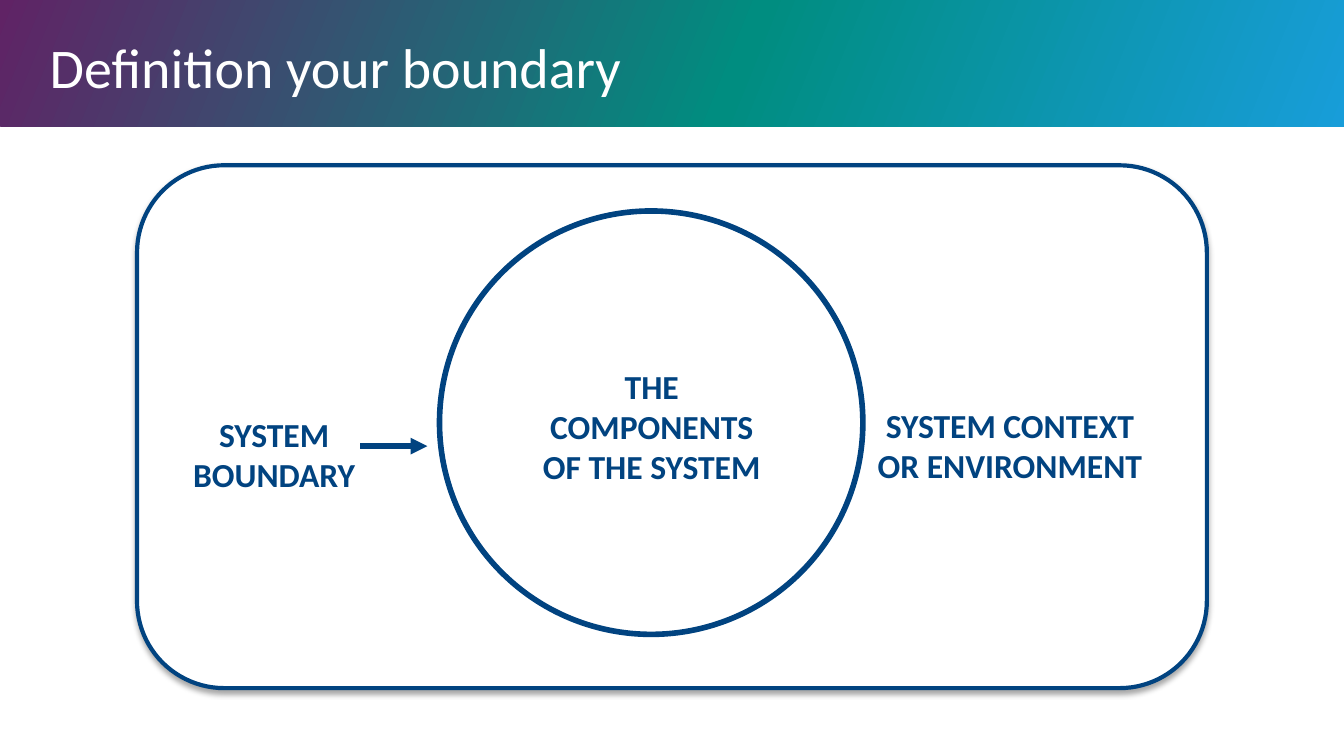
from lxml.etree import SubElement
from pptx import Presentation
from pptx.dml.color import RGBColor
from pptx.enum.shapes import MSO_CONNECTOR, MSO_SHAPE
from pptx.enum.text import MSO_ANCHOR, PP_ALIGN
from pptx.oxml import parse_xml
from pptx.oxml.ns import nsdecls, qn
from pptx.util import Inches, Pt

COLORS = {
    "purple": "602365", "green": "008D80", "sky": "189DD9",
    "navy": "014380", "white": "FFFFFF", "shadow": "000000",
}
TITLE_FONT = {"name": "Calibri", "size": Pt(30), "bold": False}
LABEL_FONT = {"name": "Calibri", "size": Pt(18), "bold": True}


def rgb(color):
    return RGBColor.from_string(COLORS[color])


def style_font(font, values, color):
    for attribute, value in values.items():
        setattr(font, attribute, value)
    font.color.rgb = rgb(color)


def set_margins(frame, horizontal, vertical):
    for side in ("left", "right"):
        setattr(frame, f"margin_{side}", Inches(horizontal))
    for side in ("top", "bottom"):
        setattr(frame, f"margin_{side}", Inches(vertical))


def style_line(line, width):
    line.color.rgb = rgb("navy")
    line.width = Pt(width)


def fill_gradient(shape, stops, angle):
    stops_xml = "".join(
        f'<a:gs pos="{position * 1000}"><a:srgbClr val="{COLORS[color]}"/></a:gs>'
        for position, color in stops)
    gradient = parse_xml(
        f'<a:gradFill {nsdecls("a")} rotWithShape="1"><a:gsLst>{stops_xml}</a:gsLst>'
        f'<a:lin ang="{angle * 60000}" scaled="0"/></a:gradFill>')
    shape._element.spPr.find(qn("a:prstGeom")).addnext(gradient)


def add_shadow(shape):
    effects = shape._element.spPr.find(qn("a:effectLst"))
    shadow = SubElement(effects, qn("a:outerShdw"), blurRad=str(Pt(3.1)),
                        dist=str(Pt(1.8)), dir=str(90 * 60000), rotWithShape="0")
    color = SubElement(shadow, qn("a:srgbClr"), val=COLORS["shadow"])
    SubElement(color, qn("a:alpha"), val="35000")


def add_outline(slide, preset, left, top, width, height, line_width):
    outline = slide.shapes.add_shape(
        preset, Inches(left), Inches(top), Inches(width), Inches(height))
    outline.shadow.inherit = False
    outline.fill.background()
    style_line(outline.line, line_width)
    return outline


def add_label(slide, text, left, top, width, height):
    label = slide.shapes.add_textbox(
        Inches(left), Inches(top), Inches(width), Inches(height))
    frame = label.text_frame
    frame.word_wrap = True
    set_margins(frame, 0.09, 0.05)
    paragraph = frame.paragraphs[0]
    paragraph.text = text
    paragraph.alignment = PP_ALIGN.CENTER
    style_font(paragraph.font, LABEL_FONT, "navy")


def add_header(slide, left, top, width, height):
    # Gradient band, placed behind the title
    band = slide.shapes.add_shape(
        MSO_SHAPE.RECTANGLE, Inches(left), Inches(top), Inches(width), Inches(height))
    band.shadow.inherit = False
    band.line.fill.background()
    fill_gradient(band, [(0, "purple"), (55, "green"), (100, "sky")], 22)
    slide.shapes._spTree.insert(2, band._element)

    # Title
    title = slide.shapes.title
    title.left, title.top = Inches(left + 0.37), Inches(top + 0.29)
    title.width, title.height = Inches(width - 0.72), Inches(0.41)
    frame = title.text_frame
    set_margins(frame, 0, 0)
    frame.vertical_anchor = MSO_ANCHOR.MIDDLE
    paragraph = frame.paragraphs[0]
    paragraph.text = "Definition your boundary"
    paragraph.alignment = PP_ALIGN.LEFT
    style_font(paragraph.font, TITLE_FONT, "white")


def add_boundary_diagram(slide, left, top, width, height):
    # Environment and the system inside it
    environment = add_outline(
        slide, MSO_SHAPE.ROUNDED_RECTANGLE, left, top, width, height, 2.25)
    environment.fill.solid()
    environment.fill.fore_color.rgb = rgb("white")
    add_shadow(environment)
    add_outline(slide, MSO_SHAPE.OVAL, left + 2.25, top + 0.34, 3.15, 3.15, 3)

    # Labels
    labels = [
        ("THE COMPONENTS OF THE SYSTEM", 2.85, 1.44, 1.96, 1.01),
        ("SYSTEM BOUNDARY", 0.16, 1.8, 1.72, 0.71),
        ("SYSTEM CONTEXT OR ENVIRONMENT", 5.41, 1.73, 2.17, 0.71),
    ]
    for text, x, y, label_width, label_height in labels:
        add_label(slide, text, left + x, top + y, label_width, label_height)

    # Arrow from the label to the system boundary
    arrow_y = Inches(top + 2.09)
    arrow = slide.shapes.add_connector(
        MSO_CONNECTOR.STRAIGHT, Inches(left + 1.66), arrow_y,
        Inches(left + 2.16), arrow_y)
    style_line(arrow.line, 3)
    SubElement(arrow.line._get_or_add_ln(), qn("a:tailEnd"), type="triangle")
    SubElement(arrow._element.spPr, qn("a:effectLst"))


def main():
    presentation = Presentation()
    # Widescreen, 16:9
    presentation.slide_width = Inches(10)
    presentation.slide_height = Inches(10) * 9 // 16
    slide = presentation.slides.add_slide(presentation.slide_layouts[5])
    add_header(slide, 0, 0, 10, 0.94)
    add_boundary_diagram(slide, 1.02, 1.23, 7.96, 3.89)
    presentation.save("out.pptx")


if __name__ == "__main__":
    main()
